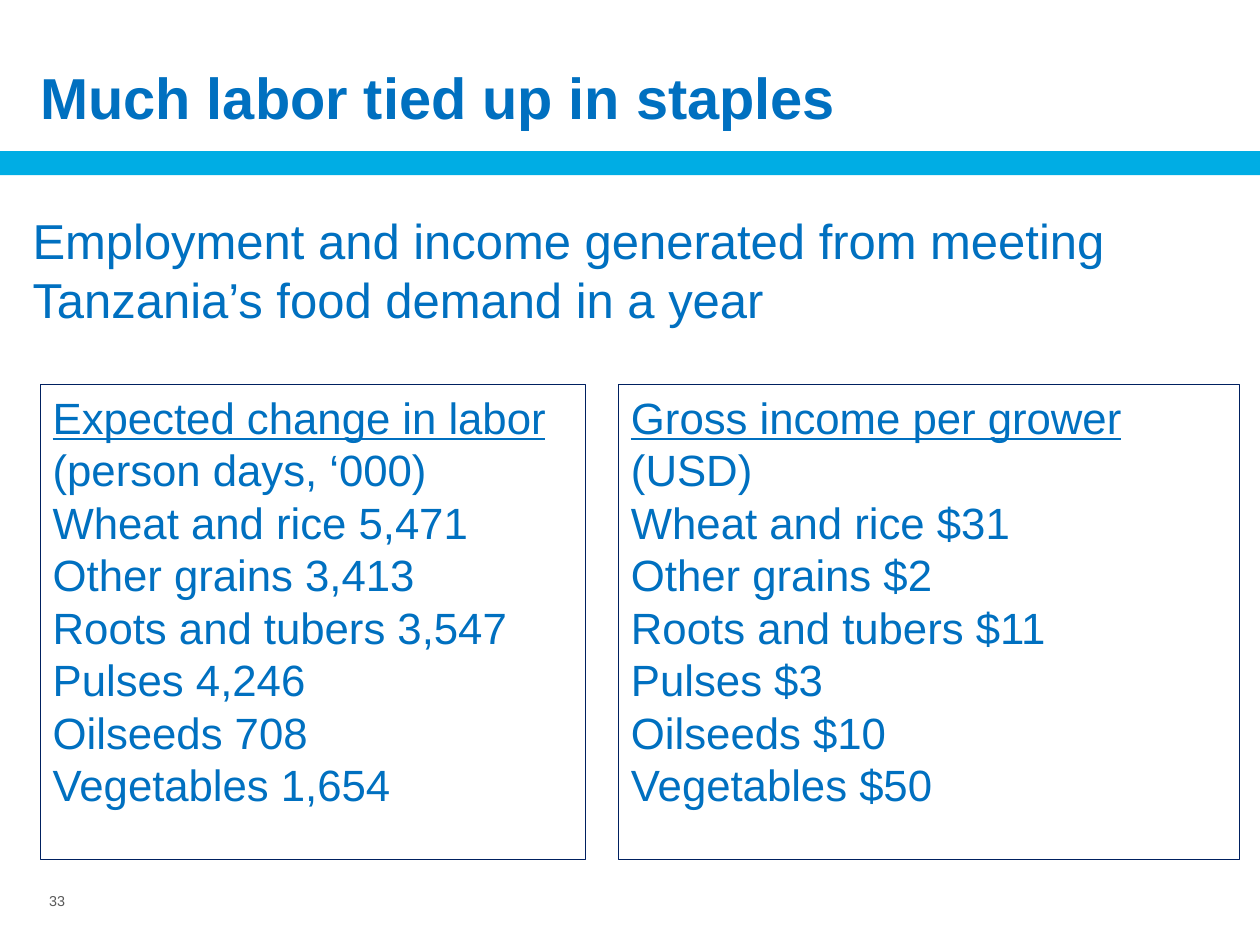
from pptx import Presentation
from pptx.dml.color import RGBColor
from pptx.enum.shapes import MSO_SHAPE
from pptx.enum.text import MSO_ANCHOR, PP_ALIGN
from pptx.util import Inches, Pt

RECTANGLE = MSO_SHAPE.RECTANGLE
TOP, MIDDLE, BOTTOM = MSO_ANCHOR.TOP, MSO_ANCHOR.MIDDLE, MSO_ANCHOR.BOTTOM
LEFT = PP_ALIGN.LEFT

FONT = "Arial"
BLUE, BAND, NAVY, GRAY = "0070C0", "00ADE4", "002060", "595959"

TITLE = "Much labor tied up in staples"
SUBTITLE = "Employment and income generated from meeting Tanzania’s food demand in a year"
PAGE_NUMBER = "33"
CROPS = ["Wheat and rice", "Other grains", "Roots and tubers", "Pulses", "Oilseeds", "Vegetables"]
PANELS = [
    {
        "left": 0.32,
        "width": 4.33,
        "heading": [[("Expected change in labor ", True), ("(person days, ‘000)", False)]],
        "values": ["5,471", "3,413", "3,547", "4,246", "708", "1,654"],
    },
    {
        "left": 4.91,
        "width": 4.93,
        "heading": [[("Gross income per grower", True)], [("(USD)", False)]],
        "values": ["$31", "$2", "$11", "$3", "$10", "$50"],
    },
]
PANEL_TOP, PANEL_HEIGHT = 3.05, 3.77


def color(value):
    return RGBColor.from_string(value)


def write_text(shape, paragraphs, size=25, font_color=BLUE, bold=False, anchor=TOP, inset=None):
    frame = shape.text_frame
    frame.word_wrap = True
    frame.vertical_anchor = anchor
    if inset is not None:
        frame.margin_left = frame.margin_right = Inches(inset)
        frame.margin_top = frame.margin_bottom = Inches(inset)
    for index, runs in enumerate(paragraphs):
        paragraph = frame.add_paragraph() if index else frame.paragraphs[0]
        paragraph.alignment = LEFT
        for text, underline in runs:
            run = paragraph.add_run()
            run.text = text
            run.font.name = FONT
            run.font.size = Pt(size)
            run.font.bold = bold
            run.font.underline = underline
            run.font.color.rgb = color(font_color)


def add_text(slide, box, text, **text_format):
    shape = slide.shapes.add_textbox(*map(Inches, box))
    write_text(shape, [[(text, False)]], **text_format)


def add_rectangle(slide, box, fill=None, line=None):
    shape = slide.shapes.add_shape(RECTANGLE, *map(Inches, box))
    shape.shadow.inherit = False
    if fill:
        shape.fill.solid()
        shape.fill.fore_color.rgb = color(fill)
    else:
        shape.fill.background()
    if line:
        shape.line.color.rgb = color(line)
        shape.line.width = Pt(0.75)
    else:
        shape.line.fill.background()
    return shape


def main():
    presentation = Presentation()
    presentation.slide_width = Inches(10)
    presentation.slide_height = Inches(7.5)
    slide = presentation.slides.add_slide(presentation.slide_layouts[6])

    add_rectangle(slide, (0, 1.2, 10, 0.19), fill=BAND)
    add_text(slide, (0.32, 0.21, 9.68, 0.83), TITLE, size=33, bold=True, anchor=BOTTOM, inset=0)
    add_text(slide, (0.39, 6.95, 0.35, 0.4), PAGE_NUMBER,
             size=8.2, font_color=GRAY, anchor=MIDDLE, inset=0)
    add_text(slide, (0.16, 1.62, 9.68, 1.04), SUBTITLE, size=28)

    for panel in PANELS:
        box = (panel["left"], PANEL_TOP, panel["width"], PANEL_HEIGHT)
        rows = [[(f"{crop} {value}", False)] for crop, value in zip(CROPS, panel["values"])]
        write_text(add_rectangle(slide, box, line=NAVY), panel["heading"] + rows)

    presentation.save("out.pptx")


if __name__ == "__main__":
    main()
